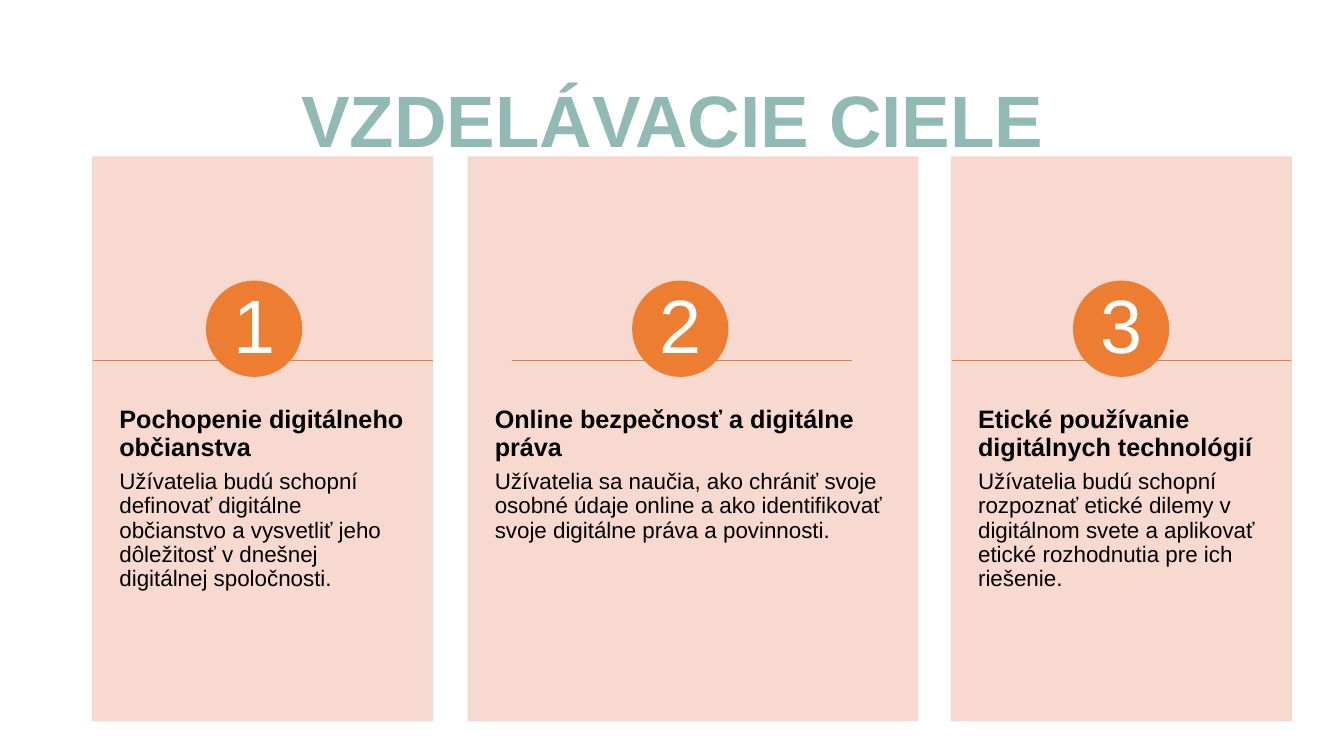
from lxml.etree import SubElement
from pptx import Presentation
from pptx.dml.color import RGBColor
from pptx.enum.shapes import MSO_CONNECTOR as Connector, MSO_SHAPE as Shape
from pptx.enum.text import MSO_ANCHOR as Anchor, PP_ALIGN as Align
from pptx.oxml.ns import qn
from pptx.util import Cm, Pt

COLORS = {"title": "92BAB5", "panel": "F7D5CB", "accent": "ED7D31",
          "text": "000000", "number": "FFFFFF"}
PANEL_TOP, PANEL_HEIGHT = 3.96, 14.2
TEXT_TOP, TEXT_HEIGHT = 9.35, 8.51
CIRCLE_TOP, CIRCLE_SIZE = 7.09, 2.39
NUMBER_SIZE = 1.7
RULE_TOP, RULE_WIDTH = 9.09, 8.56

GOALS = [
    (2.34, 8.56, 5.21, 2.34, "Pochopenie digitálneho občianstva",
     "Užívatelia budú schopní definovať digitálne občianstvo a vysvetliť "
     "jeho dôležitosť v dnešnej digitálnej spoločnosti."),
    (11.8, 11.33, 15.95, 12.9, "Online bezpečnosť a digitálne práva",
     "Užívatelia sa naučia, ako chrániť svoje osobné údaje online a ako "
     "identifikovať svoje digitálne práva a povinnosti."),
    (23.98, 8.56, 27.06, 23.98, "Etické používanie digitálnych technológií",
     "Užívatelia budú schopní rozpoznať etické dilemy v digitálnom svete "
     "a aplikovať etické rozhodnutia pre ich riešenie."),
]


class SlideBuilder:
    """Draws styled elements on the current slide."""

    def __init__(self, slide, font="Arial"):
        self.slide = slide
        self.font = font

    def color(self, name):
        return RGBColor.from_string(COLORS[name])

    def shape(self, kind, left, top, width, height, color, opacity=100):
        shape = self.slide.shapes.add_shape(
            kind, Cm(left), Cm(top), Cm(width), Cm(height))
        shape.shadow.inherit = False
        shape.line.width = Pt(1)
        for fill in (shape.fill, shape.line.fill):
            fill.solid()
            fill.fore_color.rgb = self.color(color)
        if opacity < 100:
            for tint in shape._element.spPr.iter(qn("a:srgbClr")):
                SubElement(tint, qn("a:alpha"), val=str(opacity * 1000))

    def rule(self, left, top, width, color):
        rule = self.slide.shapes.add_connector(
            Connector.STRAIGHT, Cm(left), Cm(top), Cm(left + width), Cm(top))
        rule.line.width = Pt(1)
        rule.line.color.rgb = self.color(color)
        SubElement(rule._element.spPr, qn("a:effectLst"))

    def text(self, left, top, width, height, lines, color, inset,
             align=Align.LEFT, anchor=Anchor.TOP):
        box = self.slide.shapes.add_textbox(
            Cm(left), Cm(top), Cm(width), Cm(height))
        frame = box.text_frame
        frame.word_wrap = True
        frame.vertical_anchor = anchor
        frame.margin_left = frame.margin_right = Cm(inset[0])
        frame.margin_top = frame.margin_bottom = Cm(inset[1])
        frame.text = "\n".join(line[0] for line in lines)
        for para, (_, size, bold, space) in zip(frame.paragraphs, lines):
            para.alignment = align
            para.line_spacing = 0.9
            para.space_before = Pt(space)
            span = para.runs[0]
            span.font.name = self.font
            span.font.size = Pt(size)
            span.font.bold = bold
            span.font.color.rgb = self.color(color)

    def goal(self, number, left, width, circle_left, rule_left, heading, body):
        self.shape(Shape.RECTANGLE, left, PANEL_TOP, width, PANEL_HEIGHT,
                   "panel", opacity=90)
        self.text(left, TEXT_TOP, width, TEXT_HEIGHT,
                  [(heading, 18, True, 0), (body, 16, False, 6.3)],
                  "text", (0.67, 0.91))
        self.shape(Shape.OVAL, circle_left, CIRCLE_TOP,
                   CIRCLE_SIZE, CIRCLE_SIZE, "accent")
        offset = (CIRCLE_SIZE - NUMBER_SIZE) / 2
        self.text(circle_left + offset, CIRCLE_TOP + offset,
                  NUMBER_SIZE, NUMBER_SIZE, [(str(number), 54, False, 0)],
                  "number", (0.18, 0.03), Align.CENTER, Anchor.MIDDLE)
        self.rule(rule_left, RULE_TOP, RULE_WIDTH, "accent")


def main():
    deck = Presentation()
    deck.slide_width, deck.slide_height = Cm(33.87), Cm(19.05)
    builder = SlideBuilder(deck.slides.add_slide(deck.slide_layouts[6]))
    builder.text(2.34, 1.55, 29.21, 3.15, [("VZDELÁVACIE CIELE", 52, True, 0)],
                 "title", (0.25, 0.13), Align.CENTER, Anchor.MIDDLE)
    for number, goal in enumerate(GOALS, 1):
        builder.goal(number, *goal)
    deck.save("out.pptx")


if __name__ == "__main__":
    main()
